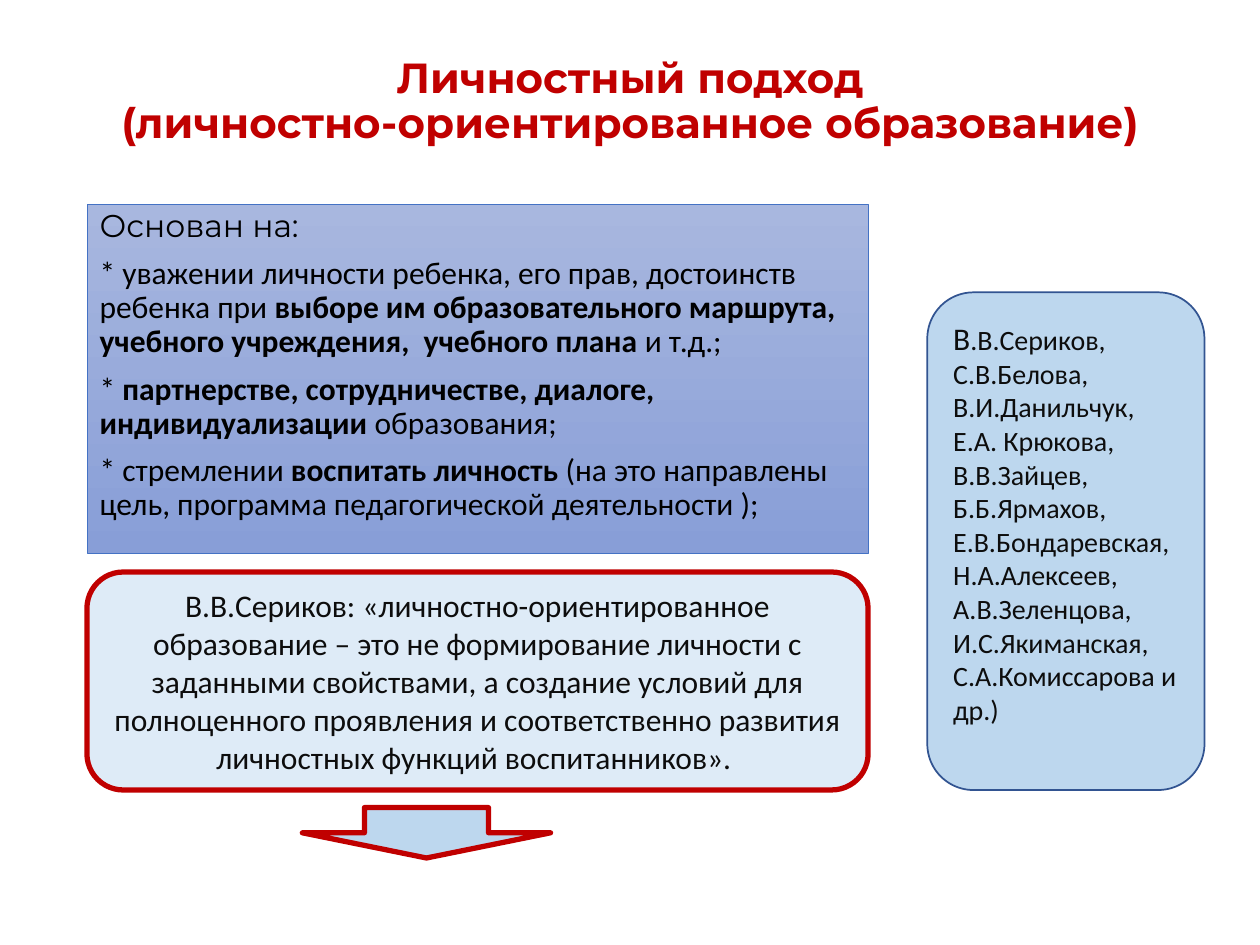
from dataclasses import dataclass

from lxml.etree import SubElement
from pptx import Presentation
from pptx.dml.color import RGBColor
from pptx.enum.shapes import MSO_SHAPE
from pptx.enum.text import MSO_ANCHOR, MSO_AUTO_SIZE, PP_ALIGN
from pptx.oxml.ns import qn
from pptx.util import Inches, Pt


@dataclass(frozen=True)
class Theme:
    accent: str = "C00000"
    black: str = "000000"
    ink: str = "0D0D0D"
    sky: str = "BDD7EE"
    pale: str = "DEEBF7"
    navy: str = "325491"
    blue: str = "4472C4"
    gradient: tuple = ("A8B7DF", "889ED7")
    head_font: str = "Montserrat"
    body_font: str = "Calibri"
    title_size: int = 24
    text_size: int = 18
    names_size: int = 16


def rgb(value):
    return RGBColor.from_string(value)


def add_text(p, text, *, font, size, color, bold=False):
    r = p.add_run()
    r.text = text
    r.font.name = font
    r.font.size = Pt(size)
    r.font.bold = bold
    r.font.color.rgb = rgb(color)


class SlideBuilder:
    def __init__(self, prs, theme):
        self.theme = theme
        self.slide = prs.slides.add_slide(prs.layouts[1] if hasattr(prs, "layouts")
                                          else prs.slide_layouts[1])

    def place(self, sp, box):
        sp.left, sp.top, sp.width, sp.height = map(Inches, box)

    def outline(self, sp, color, width):
        sp.line.color.rgb = rgb(color)
        sp.line.width = Pt(width)

    def paragraphs(self, tf, count):
        return [tf.paragraphs[0]] + [tf.add_paragraph() for _ in range(count - 1)]

    def title(self, lines, box):
        t = self.theme
        sp = self.slide.shapes.title
        self.place(sp, box)
        tf = sp.text_frame
        tf.auto_size = MSO_AUTO_SIZE.NONE
        tf.vertical_anchor = MSO_ANCHOR.MIDDLE
        p = tf.paragraphs[0]
        p.alignment = PP_ALIGN.CENTER
        p.line_spacing = 0.9
        for i, line in enumerate(lines):
            if i:
                p.add_line_break()
            add_text(p, line, font=t.head_font, size=t.title_size,
                     color=t.accent, bold=True)

    def body(self, heading, items, box):
        """Fill the body placeholder; each item is a list of (text, bold) pairs."""
        t = self.theme
        sp = self.slide.placeholders[1]
        self.place(sp, box)
        sp.fill.gradient()
        sp.fill.gradient_angle = 270
        for stop, color in zip(sp.fill.gradient_stops, t.gradient):
            stop.color.rgb = rgb(color)
        self.outline(sp, t.blue, 0.5)
        tf = sp.text_frame
        tf.auto_size = MSO_AUTO_SIZE.NONE
        ps = self.paragraphs(tf, len(items) + 1)
        for p in ps:
            p.line_spacing = 0.9
            p.space_before = Pt(7.5)
            pPr = p._p.get_or_add_pPr()
            pPr.set("marL", "0")
            pPr.set("indent", "0")
            SubElement(pPr, qn("a:buNone"))
        add_text(ps[0], heading, font=t.head_font, size=t.text_size, color=t.black)
        for p, item in zip(ps[1:], items):
            for text, bold in item:
                add_text(p, text, font=t.body_font, size=t.text_size,
                         color=t.black, bold=bold)

    def shape(self, kind, box, *, fill, line, width):
        sp = self.slide.shapes.add_shape(kind, *map(Inches, box))
        sp.shadow.inherit = False
        sp.fill.solid()
        sp.fill.fore_color.rgb = rgb(fill)
        self.outline(sp, line, width)
        return sp

    def card(self, items, box, *, align, bottom=0.05, **style):
        """Rounded box; each item is a list of (text, size) pairs."""
        t = self.theme
        sp = self.shape(MSO_SHAPE.ROUNDED_RECTANGLE, box, **style)
        tf = sp.text_frame
        tf.word_wrap = True
        tf.vertical_anchor = MSO_ANCHOR.MIDDLE
        tf.margin_bottom = Inches(bottom)
        for p, item in zip(self.paragraphs(tf, len(items)), items):
            p.alignment = align
            for text, size in item:
                add_text(p, text, font=t.body_font, size=size, color=t.ink)


def main():
    theme = Theme()
    prs = Presentation()
    prs.slide_width, prs.slide_height = Inches(10), Inches(7.5)
    s = SlideBuilder(prs, theme)
    left, width = 0.69, 6.2

    s.title(["Личностный подход", "(личностно-ориентированное образование)"],
            (left, 0.4, 8.62, 0.83))
    s.body("Основан на:", [
        [("* уважении личности ребенка, его прав, достоинств ребенка при ", False),
         ("выборе им образовательного маршрута, учебного учреждения,  "
          "учебного плана", True),
         (" и т.д.;", False)],
        [("* ", False),
         ("партнерстве, сотрудничестве, диалоге, индивидуализации ", True),
         ("образования;", False)],
        [("* стремлении ", False),
         ("воспитать личность ", True),
         ("(на это направлены цель, программа педагогической деятельности );",
          False)],
    ], (left, 1.62, width, 2.77))

    small, large = theme.names_size, theme.text_size
    s.card([
        [("В", large), (".В.Сериков, С.В.Белова, В.И.Данильчук,", small)],
        [("Е.А. Крюкова, В.В.Зайцев, Б.Б.Ярмахов, Е.В.Бондаревская, "
          "Н.А.Алексеев, А.В.Зеленцова,", small)],
        [("И.С.Якиманская, С.А.Комиссарова и др.)", small)],
    ], (7.36, 2.32, 2.2, 3.95), align=PP_ALIGN.LEFT, bottom=0.35,
        fill=theme.sky, line=theme.navy, width=1)
    s.card([
        [("В.В.Сериков: «личностно-ориентированное образование – это не "
          "формирование личности с заданными свойствами, а создание условий для "
          "полноценного проявления и соответственно развития личностных функций "
          "воспитанников». ", large)],
    ], (left, 4.54, width, 1.73), align=PP_ALIGN.CENTER,
        fill=theme.pale, line=theme.accent, width=3)
    s.shape(MSO_SHAPE.DOWN_ARROW, (2.4, 6.41, 1.97, 0.4),
            fill=theme.sky, line=theme.accent, width=3)

    prs.save("out.pptx")


if __name__ == "__main__":
    main()
